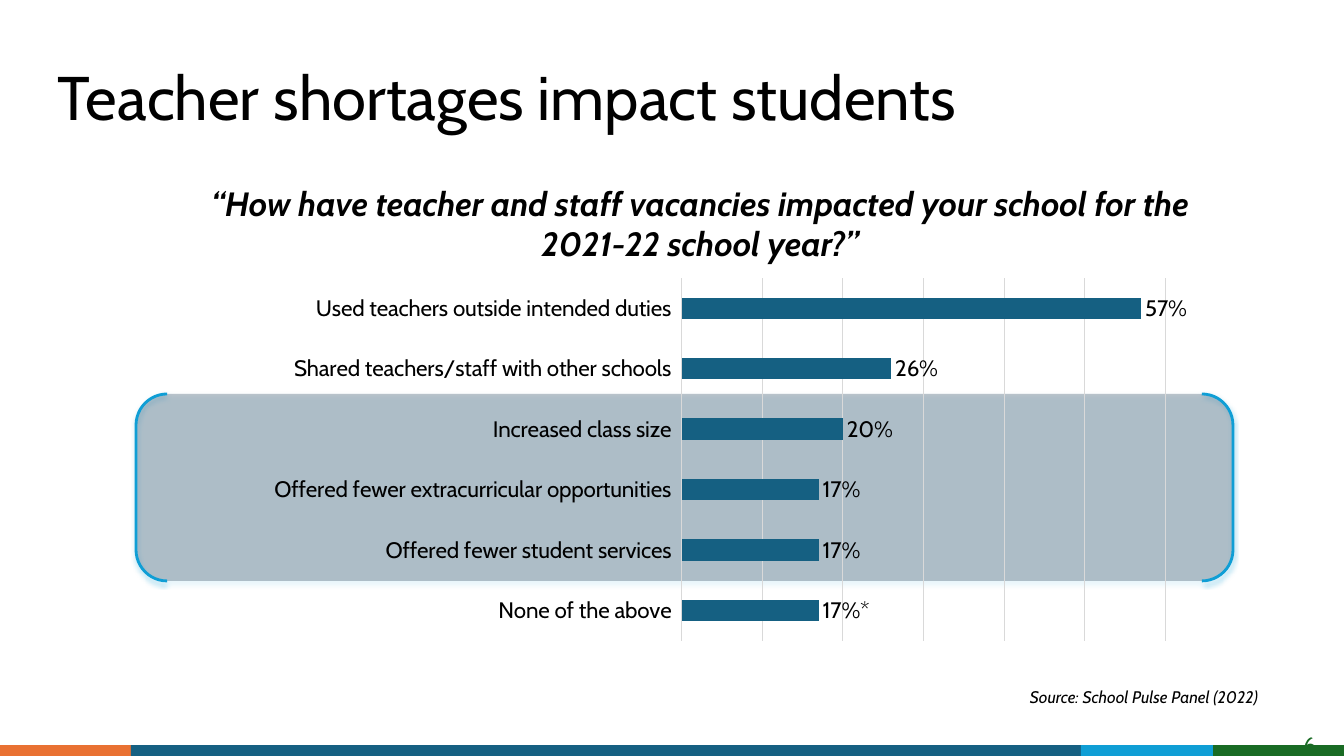
from pptx import Presentation
from pptx.chart.data import CategoryChartData
from pptx.dml.color import RGBColor
from pptx.enum.chart import XL_CHART_TYPE, XL_LABEL_POSITION, XL_TICK_LABEL_POSITION, XL_TICK_MARK
from pptx.enum.shapes import MSO_SHAPE
from pptx.enum.text import MSO_ANCHOR, PP_ALIGN
from pptx.oxml import parse_xml
from pptx.oxml.ns import nsdecls, qn
from pptx.util import Pt
from dataclasses import dataclass

# Content
TITLE = "Teacher shortages impact students"
ASK = ("“How have teacher and staff vacancies impacted your school "
       "for the 2021-22 school year?”")
SOURCE = "Source: School Pulse Panel (2022)"
PAGE = "6"
SERIES = "Series 1"
ROWS = [
    ("None of the above", 0.17),
    ("Offered fewer student services", 0.17),
    ("Offered fewer extracurricular opportunities", 0.17),
    ("Increased class size", 0.20),
    ("Shared teachers/staff with other schools", 0.26),
    ("Used teachers outside intended duties", 0.57),
]
STARRED = {0: "17%*"}


@dataclass
class Theme:
    font: str = "Cabin"
    ink: str = "000000"
    teal: str = "156082"
    sky: str = "0F9ED5"
    green: str = "196B24"
    orange: str = "E97132"
    navy: str = "0E2841"
    grid: str = "D9D9D9"
    title: int = 44
    ask: int = 24
    body: int = 16
    note: int = 12


T = Theme()
WIDE, HIGH = 1344, 756
BAND = [(T.orange, 131), (T.teal, 950), (T.sky, 132), (T.green, 131)]
BAND_TOP = 745
PLOT = {"x": 0.51, "y": 0.05, "w": 0.43, "h": 0.9}


def px(n):
    return round(n * 914400 / 100.8)


def box(*sides):
    return [px(n) for n in sides]


def rgb(code):
    return RGBColor.from_string(code)


def style(font, size, color=T.ink, bold=False, italic=False):
    font.name, font.size = T.font, Pt(size)
    font.color.rgb = rgb(color)
    font.bold, font.italic = bold, italic


def write(text, at, size, align=PP_ALIGN.LEFT, inset=None, **look):
    frame = slide.shapes.add_textbox(*box(*at)).text_frame
    frame.word_wrap = True
    if inset:
        frame.margin_top = frame.margin_bottom = px(inset)
    frame.text = text
    para = frame.paragraphs[0]
    para.alignment = align
    style(para.runs[0].font, size, **look)
    return frame


def add(kind, at, color):
    shape = slide.shapes.add_shape(kind, *box(*at))
    shape.shadow.inherit = False
    shape.fill.solid()
    shape.fill.fore_color.rgb = rgb(color)
    shape.line.fill.background()
    return shape


deck = Presentation()
deck.slide_width, deck.slide_height = box(WIDE, HIGH)
slide = deck.slides.add_slide(deck.slide_layouts[6])

# Colour band and page number
left = 0
for color, width in BAND:
    add(MSO_SHAPE.RECTANGLE, (left, BAND_TOP, width, HIGH - BAND_TOP), color)
    left += width
write(PAGE, (1245, 721, 81, 46), T.body, PP_ALIGN.RIGHT, inset=10, color=T.green)

# Highlight behind three of the bars
mark = add(MSO_SHAPE.DOUBLE_BRACKET, (136, 394, 1097, 187), T.navy)
mark.line.color.rgb = rgb(T.sky)
mark.line.width = Pt(2)
props = mark.element.spPr
tint = props.find(qn("a:solidFill")).find(qn("a:srgbClr"))
tint.append(parse_xml(f'<a:alpha {nsdecls("a")} val="27000"/>'))
props.find(qn("a:effectLst")).append(parse_xml(
    f'<a:outerShdw {nsdecls("a")} blurRad="{Pt(3.1)}" dist="{Pt(1.8)}" dir="5400000" '
    f'rotWithShape="0"><a:srgbClr val="{T.sky}"><a:alpha val="35000"/></a:srgbClr>'
    '</a:outerShdw>'))

write(SOURCE, (1020, 682, 411, 30), T.note, italic=True)

# Bar chart
data = CategoryChartData(number_format="0%")
data.categories = [name for name, _ in ROWS]
data.add_series(SERIES, [share for _, share in ROWS])
chart = slide.shapes.add_chart(
    XL_CHART_TYPE.BAR_CLUSTERED, *box(108, 258, 1125, 403), data).chart
chart.has_legend = chart.has_title = False
style(chart.font, T.body)

names = chart.category_axis
names.major_tick_mark = names.minor_tick_mark = XL_TICK_MARK.NONE
names.tick_label_position = XL_TICK_LABEL_POSITION.LOW
names.format.line.color.rgb = rgb(T.grid)
names.format.line.width = Pt(0.75)
style(names.tick_labels.font, T.body)

scale = chart.value_axis
scale.minimum_scale, scale.maximum_scale, scale.major_unit = 0, 0.6, 0.1
scale.has_major_gridlines = True
scale.major_gridlines.format.line.color.rgb = rgb(T.grid)
scale.major_gridlines.format.line.width = Pt(0.75)
scale.visible = False

plot = chart.plots[0]
plot.gap_width = 182
plot.vary_by_categories = False
bars = plot.series[0]
bars.format.fill.solid()
bars.format.fill.fore_color.rgb = rgb(T.teal)

# Bar labels
tags = bars.data_labels
tags.show_value = True
tags.number_format, tags.number_format_is_linked = "0%", False
tags.position = XL_LABEL_POSITION.OUTSIDE_END
style(tags.font, T.body)
for index, text in STARRED.items():
    tag = bars.points[index].data_label
    tag.text_frame.text = text
    style(tag.text_frame.paragraphs[0].runs[0].font, T.body)
    tag.position = XL_LABEL_POSITION.OUTSIDE_END

# Fixed inner plot area
area = chart.element.find(qn("c:chart")).find(qn("c:plotArea"))
for old in area.findall(qn("c:layout")):
    area.remove(old)
modes = '<c:xMode val="edge"/><c:yMode val="edge"/>'
sizes = "".join(f'<c:{key} val="{part}"/>' for key, part in PLOT.items())
area.insert(0, parse_xml(
    f'<c:layout {nsdecls("c")}><c:manualLayout><c:layoutTarget val="inner"/>'
    f'{modes}{sizes}</c:manualLayout></c:layout>'))

# Question and title
write(ASK, (193, 178, 1014, 92), T.ask, PP_ALIGN.CENTER, bold=True, italic=True)
head = write(TITLE, (48, 28, 1159, 146), T.title)
head.vertical_anchor = MSO_ANCHOR.MIDDLE
head.paragraphs[0].line_spacing = 0.9

deck.save("out.pptx")
